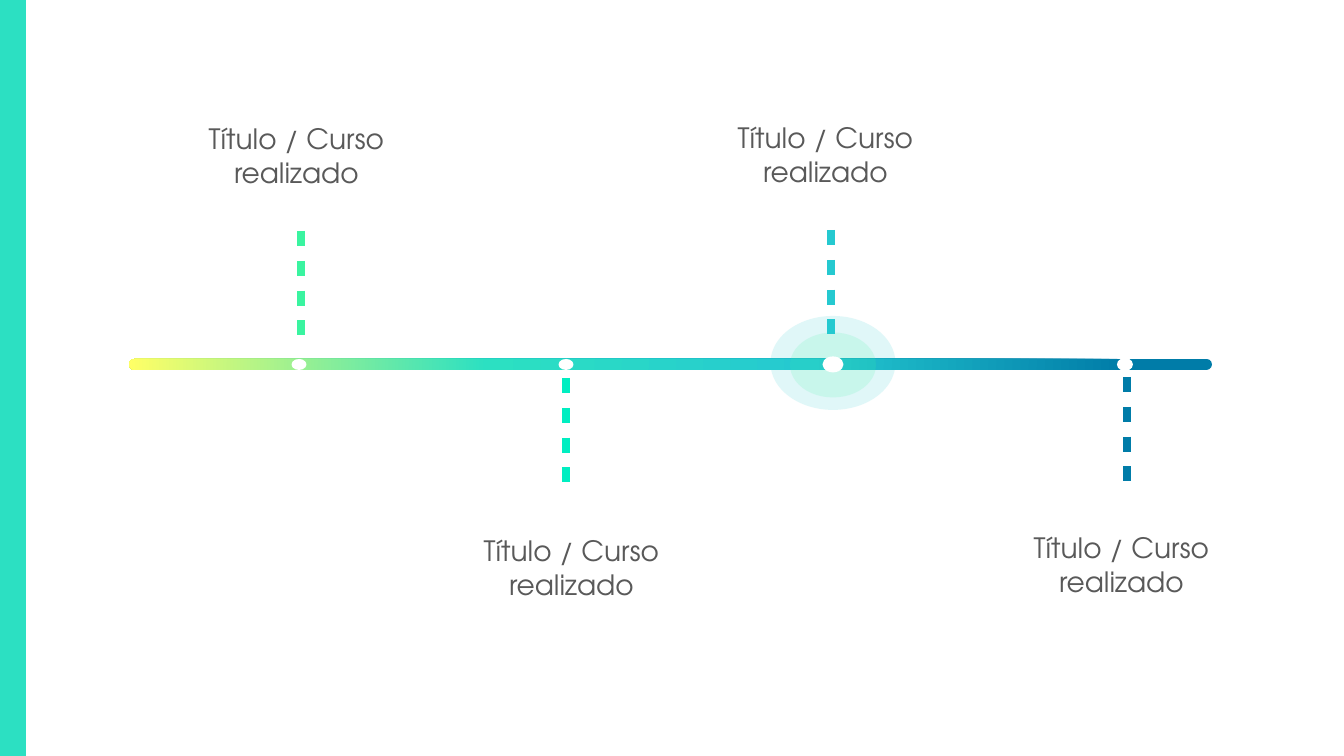
from pptx import Presentation
from pptx import util as u
from pptx.dml.color import RGBColor
from pptx.enum import shapes, text
from pptx.oxml.ns import qn
from lxml import etree

PX = u.Inches(10) / 1344
FONT = "TeX Gyre Adventor"
HUES = {
    "white": "FFFFFF", "text": "595959", "yellow": "FFFF66", "green": "3AF4A0",
    "mint": "00EEC1", "teal": "2CE0C2", "cyan": "25C9D0", "blue": "007CA8",
}
KIND = shapes.MSO_SHAPE


def px(*nums):
    return [u.Emu(round(n * PX)) for n in nums]


def rgb(hue):
    return RGBColor.from_string(HUES[hue])


def sub(node, tag, **attrs):
    return etree.SubElement(node, qn(tag), attrs)


def write(frame, words, size=15, hue="text", align=text.PP_ALIGN.CENTER):
    para = frame.paragraphs[0]
    para.alignment = align
    run = para.add_run()
    run.text = words
    run.font.name = FONT
    run.font.size = u.Pt(size)
    run.font.color.rgb = rgb(hue)


class Deck:
    def __init__(self, wide, high):
        self.prs = Presentation()
        self.prs.slide_width, self.prs.slide_height = px(wide, high)
        self.slide = self.prs.slides.add_slide(self.prs.slide_layouts[6])

    def shape(self, kind, box, hue, alpha=100):
        item = self.slide.shapes.add_shape(kind, *px(*box))
        item.shadow.inherit = False
        item.line.fill.background()
        item.fill.solid()
        item.fill.fore_color.rgb = rgb(hue)
        if alpha < 100:
            tint = item.fill._xPr.find(".//" + qn("a:srgbClr"))
            sub(tint, "a:alpha", val=str(alpha * 1000))
        return item

    def oval(self, mid, y, wide, high, hue="white", alpha=100):
        box = mid - wide / 2, y - high / 2, wide, high
        return self.shape(KIND.OVAL, box, hue, alpha)

    def bar(self, box, stops, angle):
        item = self.shape(KIND.ROUNDED_RECTANGLE, box, stops[0][1])
        item.adjustments[0] = 0.5
        item.fill.gradient()
        item.fill.gradient_angle = angle
        ramp = item.fill._xPr.find(".//" + qn("a:gsLst"))
        for old in list(ramp):
            ramp.remove(old)
        for pos, hue in stops:
            stop = sub(ramp, "a:gs", pos=str(pos * 1000))
            sub(stop, "a:srgbClr", val=HUES[hue])

    def dash(self, x, top, high, hue):
        ends = px(x, top, x, top + high)
        item = self.slide.shapes.add_connector(shapes.MSO_CONNECTOR.STRAIGHT, *ends)
        item.line.width = u.Pt(4)
        item.line.color.rgb = rgb(hue)
        style = sub(item.line._ln, "a:custDash")
        sub(style, "a:ds", d="200000", sp="200000")
        sub(item._element.spPr, "a:effectLst")

    def label(self, box, words):
        frame = self.slide.shapes.add_textbox(*px(*box)).text_frame
        frame.word_wrap = True
        frame.margin_left = frame.margin_right = u.Inches(0.06)
        frame.margin_top = frame.margin_bottom = u.Inches(0.06)
        write(frame, words)


def main():
    deck = Deck(1344, 756)
    axis = 365
    deck.oval(833, 363, 125, 94, "cyan", 14)
    deck.bar((129, 359, 1083, 11),
             [(8, "blue"), (37, "cyan"), (67, "teal"), (100, "yellow")], 179)
    deck.oval(833, axis, 86, 65, "green", 14)

    dots = [(299, 15, 11), (566, 15, 11), (833, 21, 16), (1125, 16, 13)]
    for mid, wide, high in dots:
        deck.oval(mid, axis - 0.5, wide, high)

    steps = [
        (301, 231, "green", 175, 114),
        (566, 378, "mint", 450, 526),
        (831, 230, "cyan", 704, 113),
        (1127, 377, "blue", 1000, 523),
    ]
    for x, top, hue, left, head in steps:
        deck.dash(x, top, 117, hue)
        deck.label((left, head, 243, 87), "Título / Curso realizado")

    deck.shape(KIND.RECTANGLE, (0, 0, 26, 756), "teal")
    deck.prs.save("out.pptx")


if __name__ == "__main__":
    main()
